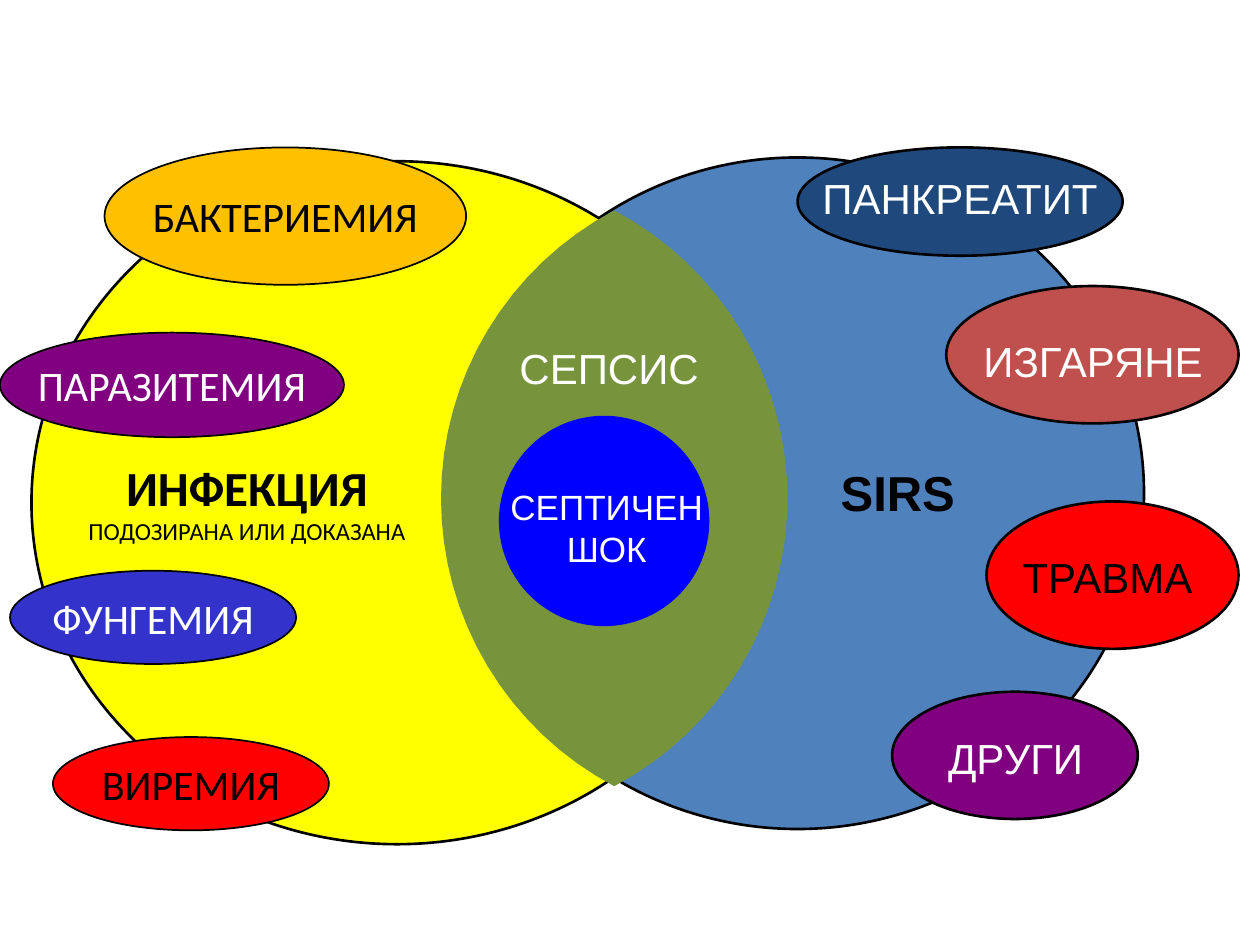
from dataclasses import dataclass
from math import asin, cos, hypot, sin

from pptx import Presentation
from pptx.dml.color import RGBColor
from pptx.enum.shapes import MSO_SHAPE
from pptx.enum.text import MSO_ANCHOR, PP_ALIGN
from pptx.util import Inches, Pt

OVAL, RECT = MSO_SHAPE.OVAL, MSO_SHAPE.RECTANGLE
TOP, MIDDLE = MSO_ANCHOR.TOP, MSO_ANCHOR.MIDDLE
CENTER = PP_ALIGN.CENTER

# The slide is a grid of 10 columns by 7.5 rows, one inch each.
COLS, ROWS = 10, 7.5
CELL = Inches(1)

COLORS = {
    "black": "000000", "white": "FFFFFF", "yellow": "FFFF00",
    "sky": "4F81BD", "navy": "1F497D", "brick": "C0504D",
    "red": "FF0000", "purple": "800080", "olive": "77933C",
    "blue": "0000FF", "amber": "FFC000", "indigo": "3333CC",
}


@dataclass
class Box:
    col: float
    row: float
    wide: float
    high: float

    def cells(self) -> list[int]:
        return [int(n * CELL) for n in (self.col, self.row, self.wide, self.high)]


@dataclass
class Line:
    text: str
    size: int = 24
    bold: bool = False


@dataclass
class Oval:
    box: Box
    fill: str
    border: float = 1.5


@dataclass
class Label:
    box: Box
    lines: list[Line]
    ink: str = "white"
    face: str = "Arial"
    fill: str = ""
    wrap: bool = False


@dataclass
class Germ:
    """An oval on the infection side that carries its own text."""
    box: Box
    name: str
    fill: str
    ink: str


SIRS = Oval(Box(3.58, 1.25, 5.5, 5.33), "sky")
INFECT = Oval(Box(0.25, 1.28, 5.8, 5.42), "yellow")
SHOCK = Oval(Box(3.96, 3.3, 1.67, 1.67), "blue", 0)
LENS = Box(3.5, 1.67, 2.75, 4.57)

CAUSES = [
    (Oval(Box(6.33, 1.17, 2.58, 0.86), "navy"),
     Label(Box(6.49, 1.37, 2.26, 0.4), [Line("ПАНКРЕАТИТ")], wrap=True)),
    (Oval(Box(7.51, 2.27, 2.32, 1.09), "brick"),
     Label(Box(7.78, 2.66, 1.79, 0.4), [Line("ИЗГАРЯНЕ")])),
    (Oval(Box(7.83, 3.98, 2, 1.17), "red"),
     Label(Box(8.11, 4.38, 1.36, 0.4), [Line("ТРАВМА")], "black")),
    (Oval(Box(7.08, 5.49, 1.95, 1.01), "purple"),
     Label(Box(7.52, 5.81, 1.08, 0.4), [Line("ДРУГИ")])),
]

GERMS = [
    Germ(Box(0.83, 1.17, 2.87, 1.09), "БАКТЕРИЕМИЯ", "amber", "black"),
    Germ(Box(0, 2.64, 2.73, 0.83), "ПАРАЗИТЕМИЯ", "purple", "white"),
    Germ(Box(0.08, 4.53, 2.27, 0.74), "ФУНГЕМИЯ", "indigo", "white"),
    Germ(Box(0.42, 5.85, 2.19, 0.74), "ВИРЕМИЯ", "red", "black"),
]

SIRS_TEXT = Label(Box(6.67, 3.67, 0.91, 0.47), [Line("SIRS", 28, True)], "black")
INFECT_TEXT = Label(
    Box(0.42, 3.63, 3.08, 0.71),
    [Line("ИНФЕКЦИЯ", 28, True), Line("ПОДОЗИРАНА ИЛИ ДОКАЗАНА", 14)],
    "black", "Calibri", "yellow", True)
SEPSIS_TEXT = Label(Box(4.1, 2.72, 1.47, 0.39), [Line("СЕПСИС")],
                    fill="olive", wrap=True)
SHOCK_TEXT = Label(Box(4.04, 3.85, 1.55, 0.67),
                   [Line("СЕПТИЧЕН", 20), Line("ШОК", 20)])


def color(name: str) -> RGBColor:
    return RGBColor.from_string(COLORS[name])


def paint(shape, fill: str, border: float = 0) -> None:
    shape.shadow.inherit = False
    shape.fill.solid()
    shape.fill.fore_color.rgb = color(fill)
    if border:
        shape.line.color.rgb = color("black")
        shape.line.width = Pt(border)
    else:
        shape.line.fill.background()


def write(frame, lines: list[Line], ink: str, face: str) -> None:
    for i, line in enumerate(lines):
        para = frame.add_paragraph() if i else frame.paragraphs[0]
        para.text = line.text
        para.alignment = CENTER
        para.font.name = face
        para.font.size = Pt(line.size)
        para.font.bold = line.bold
        para.font.color.rgb = color(ink)


def draw_oval(shapes, oval: Oval):
    shape = shapes.add_shape(OVAL, *oval.box.cells())
    paint(shape, oval.fill, oval.border)
    return shape


def draw_label(shapes, label: Label) -> None:
    if label.fill:
        shape = shapes.add_shape(RECT, *label.box.cells())
        paint(shape, label.fill)
    else:
        shape = shapes.add_textbox(*label.box.cells())
    frame = shape.text_frame
    frame.margin_left = frame.margin_right = 0
    frame.margin_top = frame.margin_bottom = 0
    frame.vertical_anchor = TOP
    frame.word_wrap = label.wrap
    write(frame, label.lines, label.ink, label.face)


def draw_germ(shapes, germ: Germ) -> None:
    frame = draw_oval(shapes, Oval(germ.box, germ.fill, 1)).text_frame
    frame.vertical_anchor = MIDDLE
    frame.word_wrap = False
    write(frame, [Line(germ.name)], germ.ink, "Calibri")


def draw_lens(shapes, box: Box, fill: str, steps: int = 32) -> None:
    """Join two equal arcs that meet at the top and bottom of the box."""
    left, top, wide, high = box.cells()
    half, rise = wide / 2, high / 2
    mid_x, mid_y = left + half, top + rise
    radius = hypot(half, rise) ** 2 / (2 * half)
    limit = asin(rise / radius)
    turns = [limit * (2 * i / steps - 1) for i in range(steps + 1)]
    arc = [(radius * cos(t) - radius + half, radius * sin(t)) for t in turns]
    ring = arc + [(-x, -y) for x, y in arc[1:]]
    points = [(round(mid_x + x), round(mid_y + y)) for x, y in ring]
    outline = shapes.build_freeform(*points[0])
    outline.add_line_segments(points[1:], close=True)
    paint(outline.convert_to_shape(), fill)


def main() -> None:
    deck = Presentation()
    deck.slide_width, deck.slide_height = int(COLS * CELL), int(ROWS * CELL)
    shapes = deck.slides.add_slide(deck.slide_layouts[6]).shapes
    pairs = [(SIRS, SIRS_TEXT), (INFECT, INFECT_TEXT), *CAUSES]
    for oval, label in pairs:
        draw_oval(shapes, oval)
        draw_label(shapes, label)
    draw_lens(shapes, LENS, "olive")
    draw_label(shapes, SEPSIS_TEXT)
    draw_oval(shapes, SHOCK)
    draw_label(shapes, SHOCK_TEXT)
    for germ in GERMS:
        draw_germ(shapes, germ)
    deck.save("out.pptx")


if __name__ == "__main__":
    main()
